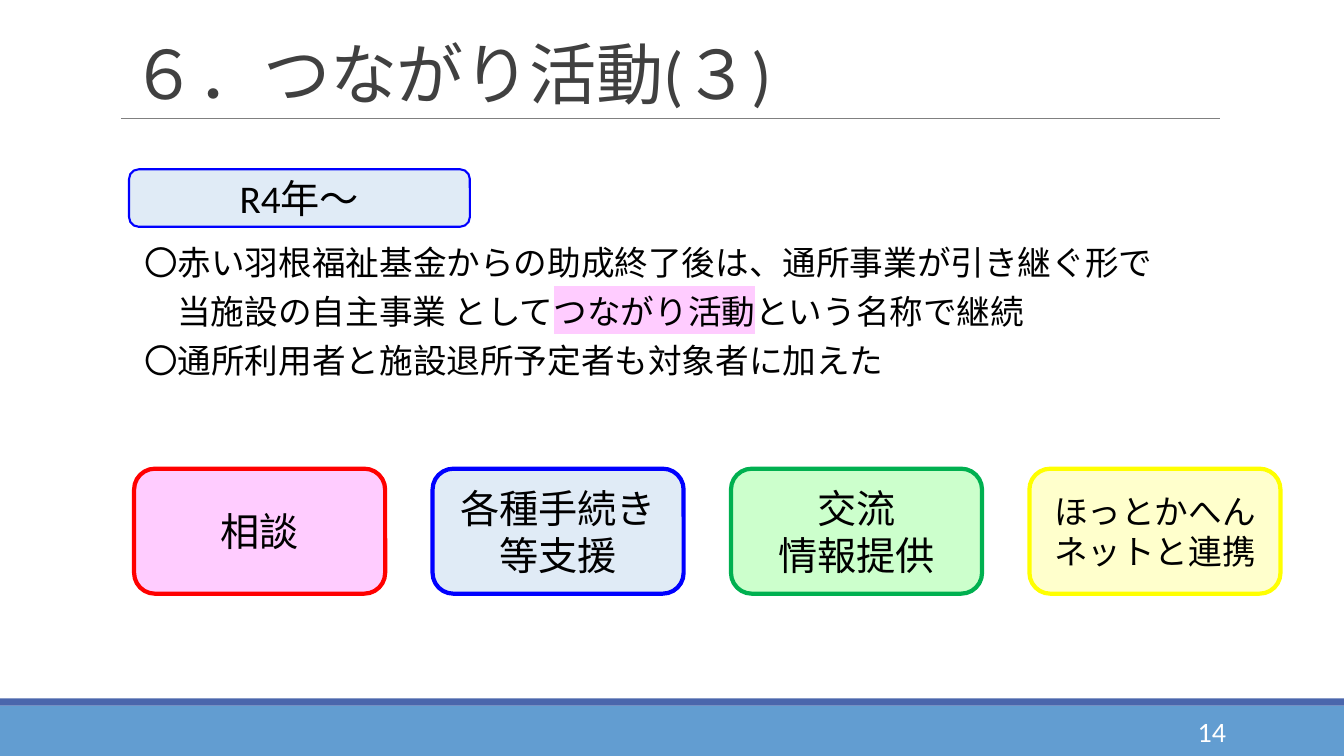
from lxml.etree import SubElement
from pptx import Presentation
from pptx.dml.color import RGBColor
from pptx.enum.shapes import MSO_CONNECTOR, MSO_SHAPE
from pptx.enum.text import MSO_ANCHOR, PP_ALIGN
from pptx.oxml import parse_xml
from pptx.oxml.ns import nsdecls, qn
from pptx.util import Inches, Pt

FONT = "Calibri"
PINK = "FFCCFF"
PALE_BLUE = "E0EBF6"
BLUE = "0000FF"


def color(code):
    return RGBColor.from_string(code)


def apply_format(target, values):
    for name, value in values.items():
        setattr(target, name, value)


def add_span(para, text, size, code="000000", highlight=None, spacing=None):
    span = para.add_run()
    span.text = text
    apply_format(span.font, {"size": Pt(size), "name": FONT})
    span.font.color.rgb = color(code)
    properties = span.font._element
    if highlight:
        mark = parse_xml(
            f'<a:highlight {nsdecls("a")}><a:srgbClr val="{highlight}"/></a:highlight>'
        )
        properties.find(qn("a:solidFill")).addnext(mark)
    if spacing:
        properties.set("spc", str(spacing))


def add_text_box(page, left, top, width, height, **frame_format):
    box = page.shapes.add_textbox(
        Inches(left), Inches(top), Inches(width), Inches(height)
    )
    apply_format(box.text_frame, {"word_wrap": True, **frame_format})
    return box.text_frame


def add_block(page, kind, left, top, width, height, fill, line=None, weight=0):
    block = page.shapes.add_shape(
        kind, Inches(left), Inches(top), Inches(width), Inches(height)
    )
    block.shadow.inherit = False
    block.fill.solid()
    block.fill.fore_color.rgb = color(fill)
    if line:
        block.line.color.rgb = color(line)
        block.line.width = Pt(weight)
    else:
        block.line.fill.background()
    return block


def add_card(page, left, top, width, height, fill, line, weight, lines, size):
    card = add_block(
        page, MSO_SHAPE.ROUNDED_RECTANGLE, left, top, width, height, fill, line, weight
    )
    frame = card.text_frame
    apply_format(frame, {"word_wrap": True, "vertical_anchor": MSO_ANCHOR.MIDDLE})
    for index, text in enumerate(lines):
        para = frame.add_paragraph() if index else frame.paragraphs[0]
        para.alignment = PP_ALIGN.CENTER
        add_span(para, text, size)


def add_rule(page, left, right, top):
    rule = page.shapes.add_connector(
        MSO_CONNECTOR.STRAIGHT, Inches(left), Inches(top), Inches(right), Inches(top)
    )
    rule.line.color.rgb = color("808080")
    rule.line.width = Pt(0.5)
    SubElement(rule._element.spPr, qn("a:effectLst"))


def add_title(page, text):
    frame = add_text_box(
        page, 1.2, 0.31, 11, 0.86, vertical_anchor=MSO_ANCHOR.BOTTOM
    )
    para = frame.paragraphs[0]
    para.line_spacing = 0.85
    add_span(para, text, 48, "404040", spacing=-50)


def add_body(page, entries):
    frame = add_text_box(page, 1.33, 2.43, 11, 1.59, margin_left=0, margin_right=0)
    for index, (indent, spans) in enumerate(entries):
        para = frame.add_paragraph() if index else frame.paragraphs[0]
        apply_format(para, {
            "line_spacing": 0.8,
            "space_before": Pt(10 if index else 0),
            "space_after": Pt(2),
        })
        para._p.get_or_add_pPr().set("marL", str(Inches(indent)))
        for text, highlight in spans:
            add_span(para, text, 24, highlight=highlight)


def add_page_number(page, number):
    frame = add_text_box(
        page, 10.83, 7.06, 1.43, 0.4, vertical_anchor=MSO_ANCHOR.MIDDLE
    )
    para = frame.paragraphs[0]
    para.alignment = PP_ALIGN.RIGHT
    add_span(para, number, 20, "FFFFFF")


def main():
    deck = Presentation()
    apply_format(deck, {"slide_width": Inches(13.33), "slide_height": Inches(7.5)})
    page = deck.slides.add_slide(deck.slide_layouts[6])

    add_block(page, MSO_SHAPE.RECTANGLE, 0, 7, 13.33, 0.5, "629DD1")
    add_block(page, MSO_SHAPE.RECTANGLE, 0, 6.93, 13.33, 0.07, "4A66AC")
    add_rule(page, 1.2, 12.1, 1.17)
    add_title(page, "６．つながり活動(３)")
    add_body(page, [
        (0.1, [("〇赤い羽根福祉基金からの助成終了後は、通所事業が引き継ぐ形で", None)]),
        (0.43, [
            ("当施設の自主事業 として", None),
            ("つながり活動", PINK),
            ("という名称で継続", None),
        ]),
        (0.1, [("〇通所利用者と施設退所予定者も対象者に加えた", None)]),
    ])
    add_page_number(page, "14")
    add_card(page, 1.28, 1.68, 3.38, 0.57, PALE_BLUE, BLUE, 1.5, ["R4年～"], 28)

    activities = [
        (PINK, "FF0000", ["相談"], 28),
        (PALE_BLUE, BLUE, ["各種手続き", "等支援"], 28),
        ("CCFFCC", "00B050", ["交流", "情報提供"], 28),
        ("FFFFCC", "FFFF00", ["ほっとかへん", "ネットと連携"], 24),
    ]
    for index, (fill, line, lines, size) in enumerate(activities):
        left = 1.33 + 2.96 * index
        add_card(page, left, 4.65, 2.49, 1.24, fill, line, 3, lines, size)

    deck.save("out.pptx")


if __name__ == "__main__":
    main()
